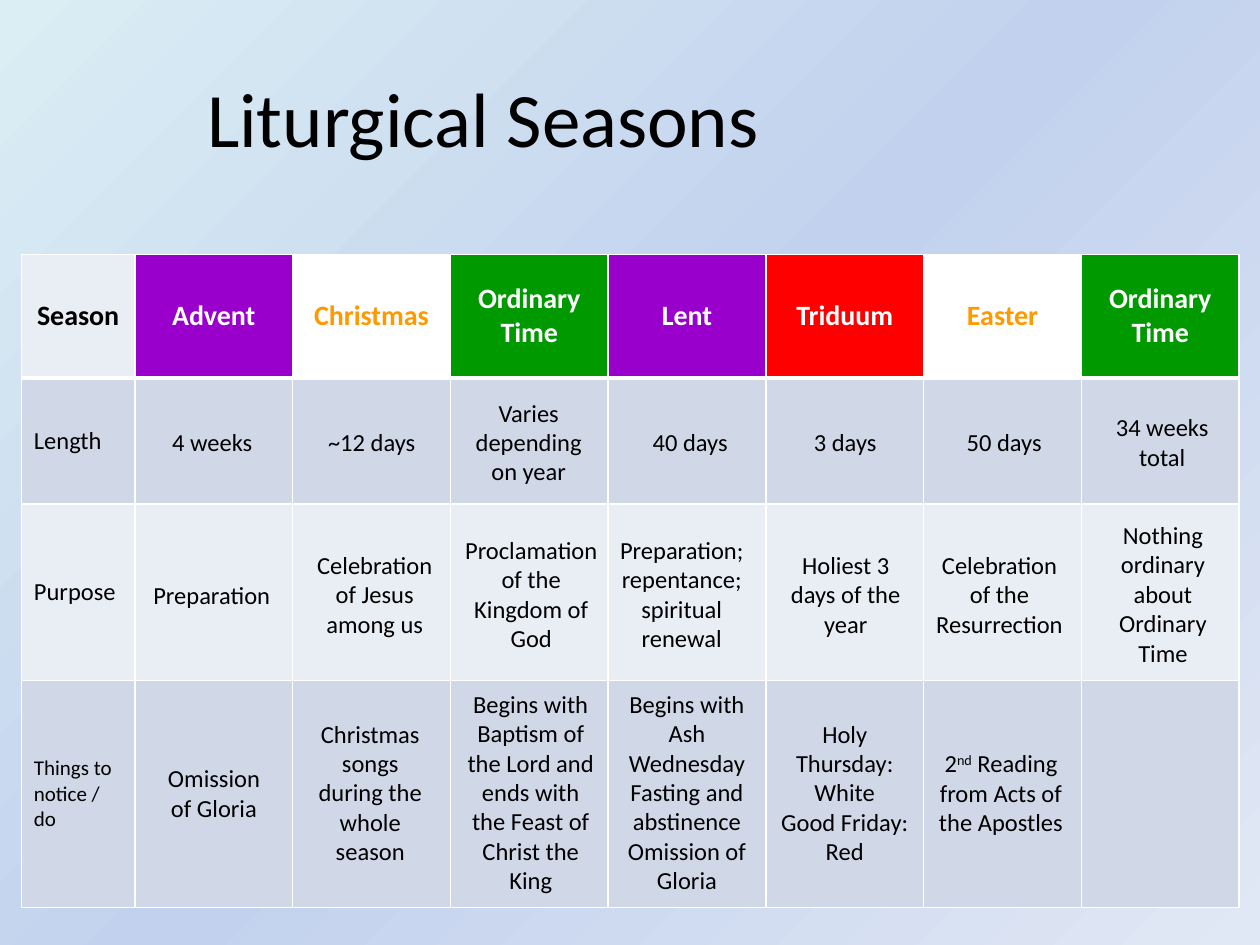
from copy import deepcopy
from typing import NamedTuple

from lxml.etree import SubElement
from pptx import Presentation
from pptx.dml.color import RGBColor
from pptx.enum.text import MSO_ANCHOR, PP_ALIGN
from pptx.oxml.ns import qn
from pptx.util import Cm, Pt

BLACK = RGBColor(0x00, 0x00, 0x00)
WHITE = RGBColor(0xFF, 0xFF, 0xFF)
GOLD = RGBColor(0xFF, 0x99, 0x00)
PURPLE = RGBColor(0x99, 0x00, 0xCC)
GREEN = RGBColor(0x00, 0x99, 0x00)
RED = RGBColor(0xFF, 0x00, 0x00)
PALE = RGBColor(0xE9, 0xED, 0xF4)
BLUE = RGBColor(0xD0, 0xD8, 0xE8)
SKY = (RGBColor(0xDB, 0xEE, 0xF4), RGBColor(0xC2, 0xD1, 0xED),
       RGBColor(0xE1, 0xE8, 0xF5))


class Season(NamedTuple):
    name: str
    fill: RGBColor
    ink: RGBColor = WHITE


class Note(NamedTuple):
    text: str
    left: float
    width: float
    lines: int = 1


class Band(NamedTuple):
    label: str
    size: int
    high: float
    fill: RGBColor
    mid: float
    notes: list[Note]


SEASONS = [
    Season("Season", PALE, BLACK),
    Season("Advent", PURPLE),
    Season("Christmas", WHITE, GOLD),
    Season("Ordinary Time", GREEN),
    Season("Lent", PURPLE),
    Season("Triduum", RED),
    Season("Easter", WHITE, GOLD),
    Season("Ordinary Time", GREEN),
]

# A caret pair encloses superscript; a newline starts a paragraph.
BANDS = [
    Band("Length", 14, 2.54, BLUE, 8.92, [
        Note("4 weeks", 3.2, 2.16),
        Note("~12 days", 6.35, 2.29),
        Note("Varies depending on year", 9.25, 2.82, 3),
        Note("40 days", 12.9, 2.03),
        Note("3 days", 16.15, 1.78),
        Note("50 days", 19.23, 2.03),
        Note("34 weeks total", 22.02, 2.82, 2),
    ]),
    Band("Purpose", 14, 3.56, PALE, 11.99, [
        Note("Preparation", 2.82, 2.9),
        Note("Celebration of Jesus among us", 5.94, 3.23, 3),
        Note("Proclamation of the Kingdom of God", 9.12, 3.18, 4),
        Note("Preparation; repentance; spiritual renewal", 12.17, 3.15, 4),
        Note("Holiest 3 days of the year", 15.49, 3.12, 3),
        Note("Celebration of the Resurrection", 18.59, 3.12, 3),
        Note("Nothing ordinary about Ordinary Time", 21.92, 3.05, 5),
    ]),
    Band("Things to notice / do", 12, 4.57, BLUE, 15.99, [
        Note("Omission of Gloria", 2.92, 2.79, 2),
        Note("Christmas songs during the whole season", 6.07, 2.79, 5),
        Note("Begins with Baptism of the Lord and ends with the Feast of "
             "Christ the King", 9.14, 3.12, 7),
        Note("Begins with Ash Wednesday\nFasting and abstinence\n"
             "Omission of Gloria", 12.4, 2.9, 7),
        Note("Holy Thursday: White\nGood Friday: Red", 15.47, 3.12, 5),
        Note("2^nd^ Reading from Acts of the Apostles", 18.62, 3.12, 3),
    ]),
]
HEAD_HIGH = 2.49
COLS = [2.29] + [3.18] * 7


def write(frame, text: str, *, size: int = 14, ink: RGBColor = BLACK,
          bold: bool = False, align=PP_ALIGN.CENTER) -> None:
    for i, line in enumerate(text.split("\n")):
        para = frame.paragraphs[0] if i == 0 else frame.add_paragraph()
        para.alignment = align
        for j, part in enumerate(line.split("^")):
            run = para.add_run()
            run.text = part
            font = run.font
            font.name, font.size, font.bold = "Calibri", Pt(size), bold
            font.color.rgb = ink
            if j % 2:
                run._r.get_or_add_rPr().set("baseline", "30000")


def add_box(slide, left: float, top: float, width: float, high: float):
    box = slide.shapes.add_textbox(Cm(left), Cm(top), Cm(width), Cm(high))
    box.text_frame.word_wrap = True
    return box.text_frame


def add_note(slide, note: Note, mid: float) -> None:
    """Centre a note on the middle height of its row."""
    high = 0.86 + 0.6 * (note.lines - 1)
    frame = add_box(slide, note.left, mid - high / 2, note.width, high)
    frame.word_wrap = note.lines > 1
    write(frame, note.text)


def style_cell(cell, fill: RGBColor, top: int = 1, base: int = 1) -> None:
    """Set the fill and the white borders, with widths in points."""
    cell.vertical_anchor = MSO_ANCHOR.MIDDLE
    props = cell._tc.get_or_add_tcPr()
    for side, width in (("L", 1), ("R", 1), ("T", top), ("B", base)):
        line = SubElement(props, qn(f"a:ln{side}"), w=str(Pt(width)))
        solid = SubElement(line, qn("a:solidFill"))
        SubElement(solid, qn("a:srgbClr"), val=str(WHITE))
    cell.fill.solid()
    cell.fill.fore_color.rgb = fill


def add_grid(slide) -> None:
    highs = [HEAD_HIGH] + [band.high for band in BANDS]
    grid = slide.shapes.add_table(len(highs), len(COLS), Cm(0.43), Cm(5.13),
                                  Cm(sum(COLS)), Cm(sum(highs))).table
    for col, width in zip(grid.columns, COLS):
        col.width = Cm(width)
    for row, high in zip(grid.rows, highs):
        row.height = Cm(high)
    for c, season in enumerate(SEASONS):
        cell = grid.cell(0, c)
        style_cell(cell, season.fill, base=3)
        write(cell.text_frame, season.name, size=16, ink=season.ink, bold=True)
    for r, band in enumerate(BANDS, 1):
        for c in range(len(COLS)):
            style_cell(grid.cell(r, c), band.fill, top=3 if r == 1 else 1)
        write(grid.cell(r, 0).text_frame, band.label, size=band.size,
              align=PP_ALIGN.LEFT)


def paint_sky(slide) -> None:
    fill = slide.background.fill
    fill.gradient()
    fill.gradient_angle = 315
    stops = slide._element.find(".//" + qn("a:gsLst"))
    stops.insert(1, deepcopy(stops[0]))
    for i, (stop, tint) in enumerate(zip(fill.gradient_stops, SKY)):
        stop.color.rgb = tint
        stop.position = i / 2


def main() -> None:
    deck = Presentation()
    deck.slide_width, deck.slide_height = Cm(25.4), Cm(19.05)
    slide = deck.slides.add_slide(deck.slide_layouts[6])
    paint_sky(slide)
    title = add_box(slide, 1.27, 0.76, 16.94, 3.18)
    title.vertical_anchor = MSO_ANCHOR.MIDDLE
    write(title, "Liturgical Seasons", size=44)
    add_grid(slide)
    for band in BANDS:
        for note in band.notes:
            add_note(slide, note, band.mid)
    deck.save("out.pptx")


if __name__ == "__main__":
    main()
